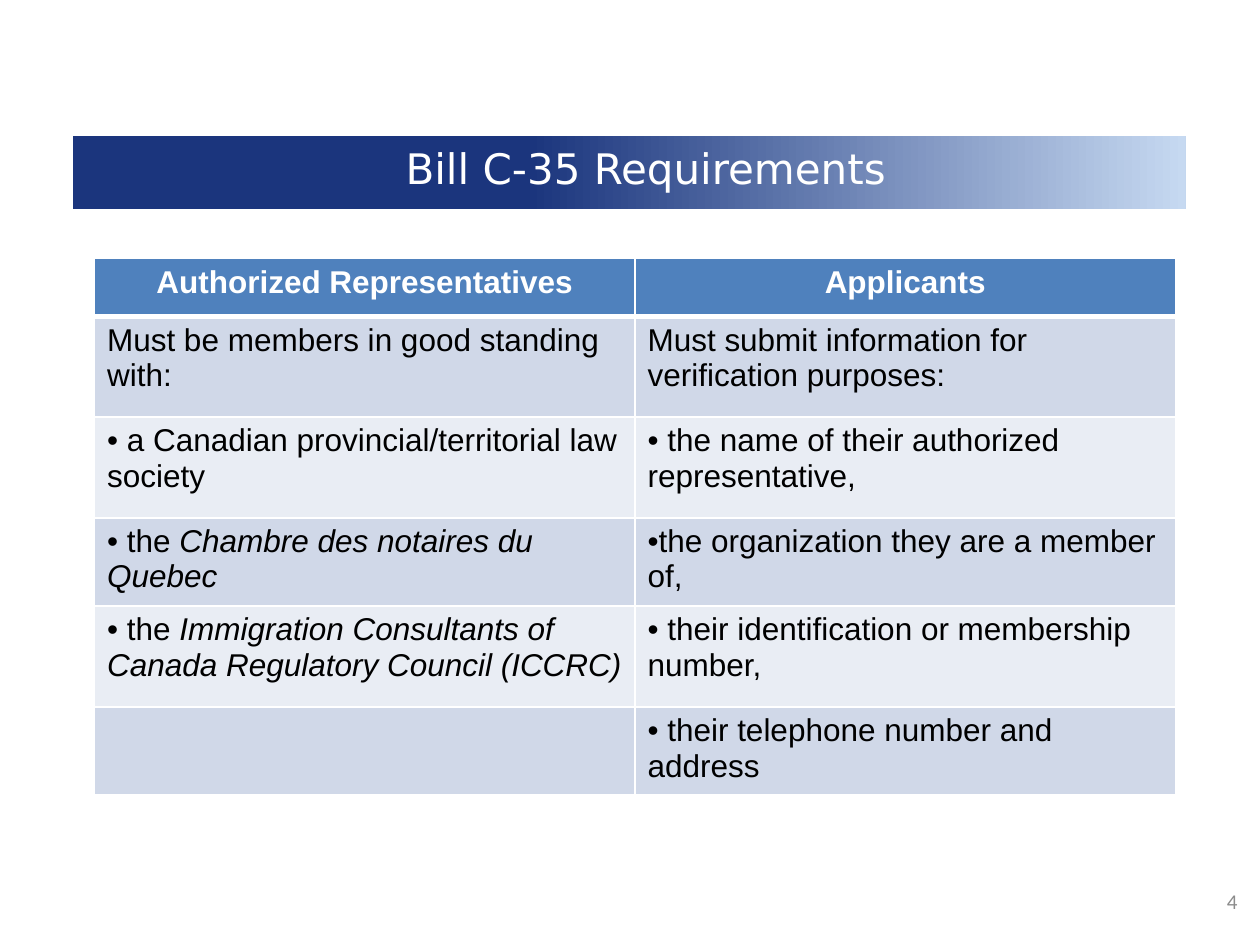
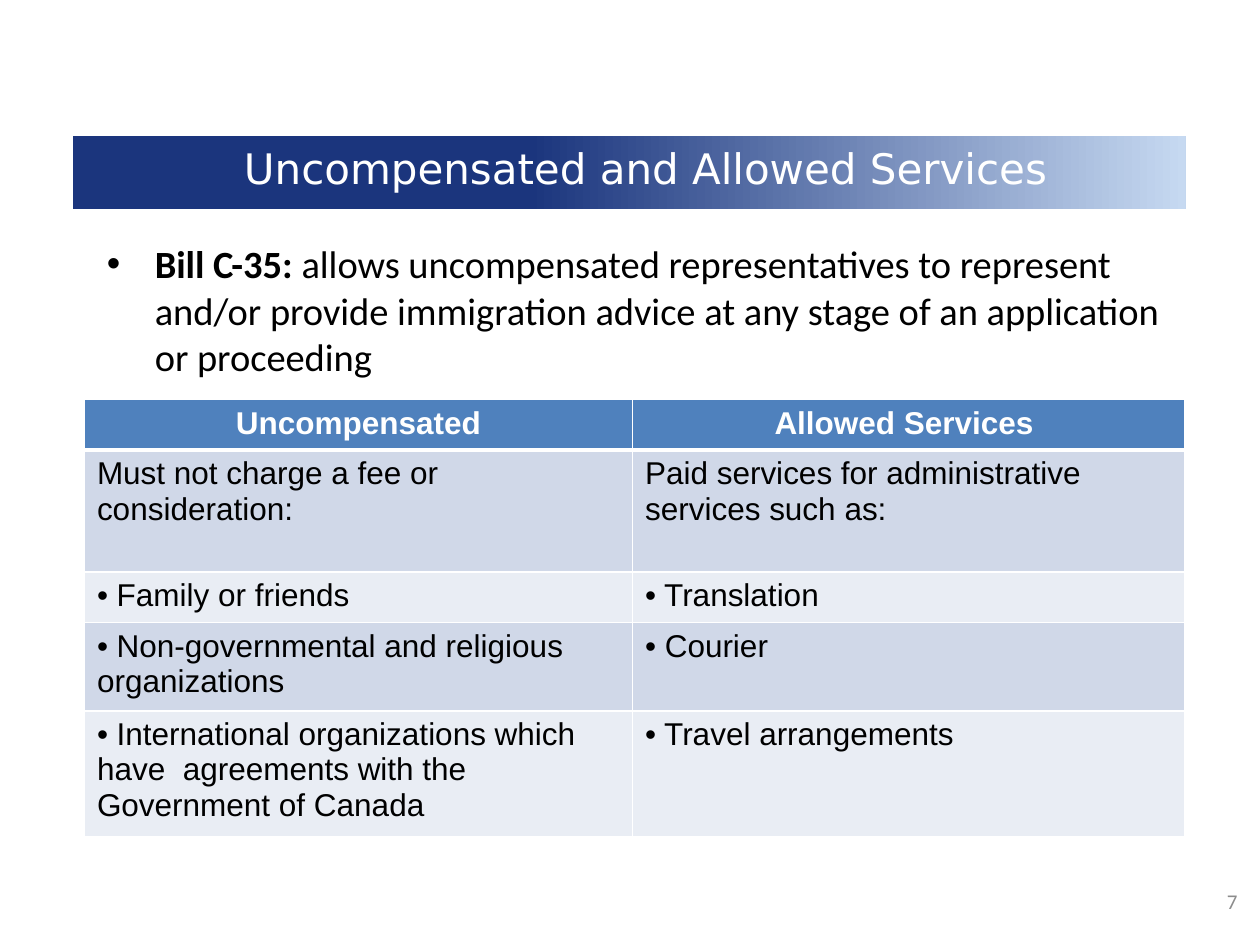
from dataclasses import dataclass
from typing import Optional

from lxml.etree import SubElement
from pptx import Presentation
from pptx.dml.color import RGBColor
from pptx.enum.shapes import MSO_SHAPE as Shape
from pptx.enum.text import MSO_ANCHOR as Anchor, PP_ALIGN as Align
from pptx.oxml.ns import qn
from pptx.util import Inches, Pt

COLORS = {
    "navy": "1B357D",
    "pale_blue": "C6D9F1",
    "header": "4F81BD",
    "band_dark": "D0D8E8",
    "band_light": "E9EDF4",
    "white": "FFFFFF",
    "black": "000000",
    "grey": "8C8C8C",
}


@dataclass(frozen=True)
class Style:
    font: str
    size: int
    color: str
    bold: bool = False


@dataclass(frozen=True)
class Entry:
    """Table text: an optional bullet, plain words, then words in italics."""
    text: str
    italic: str = ""
    bullet: bool = True


@dataclass(frozen=True)
class Grid:
    left: float
    top: float
    columns: tuple[float, ...]
    heights: tuple[float, ...]
    headings: tuple[str, ...]
    rows: tuple[tuple[Optional[Entry], ...], ...]


@dataclass(frozen=True)
class Page:
    title: str
    number: int
    grid: Grid
    lead: str = ""
    statement: str = ""


TITLE = Style("DejaVu Sans", 24, "white")
NUMBER = Style("Calibri", 12, "grey")
LEAD = Style("Calibri", 22, "black", bold=True)
STATEMENT = Style("Calibri", 22, "black")
HEADING = Style("Arial", 18, "white", bold=True)
CELL = Style("Arial", 18, "black")

PAGES = (
    Page("Bill C-35 Requirements", 4, Grid(
        0.75, 2.05, (4.29, 4.29), (0.46, 0.8, 0.8, 0.66, 0.8, 0.66),
        ("Authorized Representatives", "Applicants"),
        (
            (Entry("Must be members in good standing with:", bullet=False),
             Entry("Must submit information for verification purposes:", bullet=False)),
            (Entry(" a Canadian provincial/territorial law society"),
             Entry(" the name of their authorized representative,")),
            (Entry(" the ", "Chambre des notaires du Quebec"),
             Entry("the organization they are a member of,")),
            (Entry(" the ", "Immigration Consultants of Canada Regulatory Council (ICCRC)"),
             Entry(" their identification or membership number,")),
            (None, Entry(" their telephone number and address")),
        ))),
    Page("Uncompensated and Allowed Services", 7, Grid(
        0.67, 3.17, (4.35, 4.38), (0.37, 0.97, 0.38, 0.66, 0.94),
        ("Uncompensated", "Allowed Services "),
        (
            (Entry("Must not charge a fee or consideration:", bullet=False),
             Entry("Paid services for administrative services such as:", bullet=False)),
            (Entry(" Family or friends"), Entry(" Translation")),
            (Entry(" Non-governmental and religious organizations"), Entry(" Courier")),
            (Entry(" International organizations which have  agreements with the "
                   "Government of Canada"), Entry(" Travel arrangements")),
        )),
        "Bill C-35: ",
        "allows uncompensated representatives to represent and/or provide "
        "immigration advice at any stage of an application or proceeding"),
)


def rgb(name: str) -> RGBColor:
    return RGBColor.from_string(COLORS[name])


def format_run(run, style: Style, italic: bool = False) -> None:
    font = run.font
    font.name, font.size = style.font, Pt(style.size)
    font.bold, font.italic = style.bold, italic
    font.color.rgb = rgb(style.color)


def add_bullet(paragraph, hanging: float = 0) -> None:
    properties = paragraph._p.get_or_add_pPr()
    properties.set("marL", str(Inches(hanging)))
    properties.set("indent", str(-Inches(hanging)))
    SubElement(properties, qn("a:buFont"), typeface="Arial")
    SubElement(properties, qn("a:buChar"), char="•")


def add_text(slide, box: tuple[float, ...], text: str, style: Style,
             align: Align = Align.LEFT, anchor: Anchor = Anchor.MIDDLE):
    frame = slide.shapes.add_textbox(*map(Inches, box)).text_frame
    frame.word_wrap = True
    frame.vertical_anchor = anchor
    frame.text = text
    paragraph = frame.paragraphs[0]
    paragraph.alignment = align
    format_run(paragraph.runs[0], style)
    return paragraph


def add_title_band(slide) -> None:
    band = slide.shapes.add_shape(
        Shape.RECTANGLE, Inches(0.58), Inches(1.08), Inches(8.83), Inches(0.58))
    band.shadow.inherit = False
    band.line.fill.background()
    band.fill.gradient()
    band.fill.gradient_angle = 0
    stops = ((0.41, "navy"), (1, "pale_blue"))
    for stop, (position, color) in zip(band.fill.gradient_stops, stops):
        stop.position = position
        stop.color.rgb = rgb(color)


def add_statement(slide, lead: str, statement: str) -> None:
    paragraph = add_text(slide, (0.75, 1.86, 8.58, 4.8), lead, LEAD, anchor=Anchor.TOP)
    add_bullet(paragraph, 0.38)
    rest = paragraph.add_run()
    rest.text = statement
    format_run(rest, STATEMENT)


def paint_cell(cell, fill: str, row: int) -> None:
    # Borders come before the fill in the cell properties
    properties = cell._tc.get_or_add_tcPr()
    thick = {0: "lnB", 1: "lnT"}.get(row)
    for side in ("lnL", "lnR", "lnT", "lnB"):
        width = Pt(3 if side == thick else 1)
        line = SubElement(properties, qn(f"a:{side}"), w=str(width))
        solid = SubElement(line, qn("a:solidFill"))
        SubElement(solid, qn("a:srgbClr"), val=COLORS["white"])
    cell.fill.solid()
    cell.fill.fore_color.rgb = rgb(fill)


def fill_entry(cell, entry: Entry) -> None:
    paragraph = cell.text_frame.paragraphs[0]
    paragraph.text = entry.text
    format_run(paragraph.runs[0], CELL)
    if entry.bullet:
        add_bullet(paragraph)
    if entry.italic:
        name = paragraph.add_run()
        name.text = entry.italic
        format_run(name, CELL, italic=True)


def add_grid(slide, grid: Grid) -> None:
    table = slide.shapes.add_table(
        len(grid.heights), len(grid.columns), Inches(grid.left), Inches(grid.top),
        Inches(sum(grid.columns)), Inches(sum(grid.heights))).table
    for column, width in zip(table.columns, grid.columns):
        column.width = Inches(width)
    for row, height in zip(table.rows, grid.heights):
        row.height = Inches(height)

    # Heading row
    for index, heading in enumerate(grid.headings):
        cell = table.cell(0, index)
        paint_cell(cell, "header", 0)
        paragraph = cell.text_frame.paragraphs[0]
        paragraph.text = heading
        paragraph.alignment = Align.CENTER
        format_run(paragraph.runs[0], HEADING)

    # Banded rows
    for number, entries in enumerate(grid.rows, start=1):
        for index, entry in enumerate(entries):
            cell = table.cell(number, index)
            paint_cell(cell, "band_dark" if number % 2 else "band_light", number)
            if entry:
                fill_entry(cell, entry)


def add_page(deck, page: Page) -> None:
    slide = deck.slides.add_slide(deck.slide_layouts[6])
    add_title_band(slide)
    if page.statement:
        add_statement(slide, page.lead, page.statement)
    add_text(slide, (0.75, 1, 8.75, 0.67), page.title, TITLE, Align.CENTER)
    add_text(slide, (9, 6.95, 0.92, 0.4), str(page.number), NUMBER, Align.RIGHT)
    add_grid(slide, page.grid)


def main() -> None:
    deck = Presentation()
    deck.slide_width, deck.slide_height = Inches(10), Inches(7.5)
    for page in PAGES:
        add_page(deck, page)
    deck.save("out.pptx")


if __name__ == "__main__":
    main()
